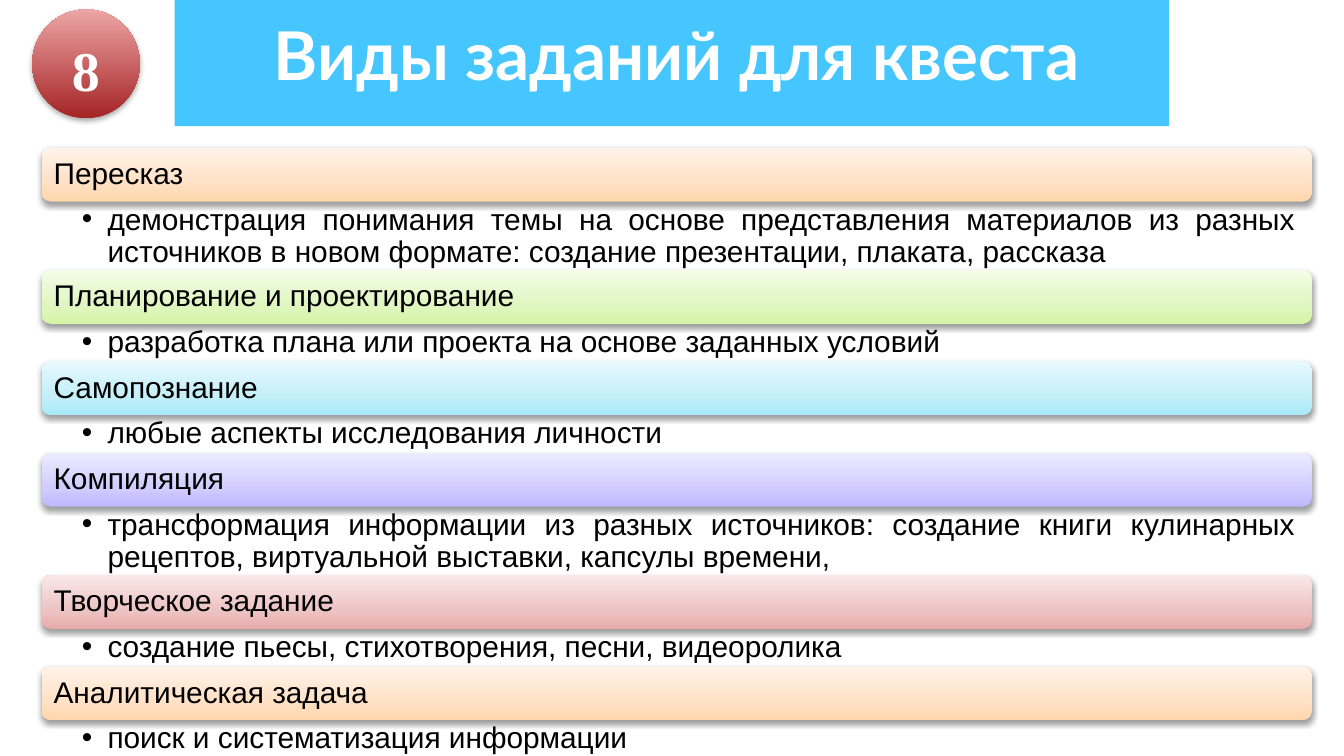
import pptx
import pptx.util
import pptx.dml.color
import pptx.enum.shapes
import pptx.enum.text
import pptx.oxml.ns
import lxml.etree

Inches = pptx.util.Inches
Pt = pptx.util.Pt
RGBColor = pptx.dml.color.RGBColor
KIND = pptx.enum.shapes.MSO_SHAPE
ALIGN = pptx.enum.text.PP_ALIGN
ANCHOR = pptx.enum.text.MSO_ANCHOR
qn = pptx.oxml.ns.qn

WHITE = RGBColor(0xFF, 0xFF, 0xFF)
BLACK = RGBColor(0, 0, 0)
BLUE = RGBColor(0, 0xB2, 0xFF)
ORANGE = [(0, RGBColor(0xFF, 0xD6, 0xAD)), (35, RGBColor(0xFF, 0xE1, 0xC5)), (100, RGBColor(0xFF, 0xF3, 0xE9))]
GREEN = [(0, RGBColor(0xD5, 0xF4, 0xA6)), (35, RGBColor(0xE0, 0xF6, 0xC1)), (100, RGBColor(0xF3, 0xFD, 0xE7))]
CYAN = [(0, RGBColor(0xA9, 0xE9, 0xF9)), (35, RGBColor(0xC3, 0xEF, 0xF9)), (100, RGBColor(0xE7, 0xF9, 0xFE))]
VIOLET = [(0, RGBColor(0xBF, 0xB8, 0xFF)), (35, RGBColor(0xD1, 0xCC, 0xFF)), (100, RGBColor(0xED, 0xEB, 0xFF))]
ROSE = [(0, RGBColor(0xE8, 0xAA, 0xAA)), (35, RGBColor(0xED, 0xC4, 0xC4)), (100, RGBColor(0xF9, 0xE8, 0xE8))]
RED = [(0, RGBColor(0xA5, 0x24, 0x25)), (100, RGBColor(0xED, 0xA5, 0xA5))]

LEFT, WIDTH, HEAD = 0.31, 9.45, 0.4
ONE, TWO = 0.28, 0.51
PLAIN = {"name": "Arial", "size": Pt(16), "bold": False}
TASKS = [
    ("Пересказ", "демонстрация понимания темы на основе представления материалов из разных "
     "источников в новом формате: создание презентации, плаката, рассказа", TWO, ORANGE),
    ("Планирование и проектирование", "разработка плана или проекта на основе заданных условий", ONE, GREEN),
    ("Самопознание", "любые аспекты исследования личности", ONE, CYAN),
    ("Компиляция", "трансформация информации из разных источников: создание книги кулинарных "
     "рецептов, виртуальной выставки, капсулы времени,", TWO, VIOLET),
    ("Творческое задание", "создание пьесы, стихотворения, песни, видеоролика", ONE, ROSE),
    ("Аналитическая задача", "поиск и систематизация информации", ONE, ORANGE),
]


def add_node(parent, tag, **values):
    return lxml.etree.SubElement(parent, qn(tag), {key: str(value) for key, value in values.items()})


def set_all(item, values):
    for key, value in values.items():
        setattr(item, key, value)


def add_shape(slide, kind, box):
    shape = slide.shapes.add_shape(kind, *map(Inches, box))
    shape.shadow.inherit = False
    shape.line.fill.background()
    return shape


def add_shade(shape, stops, alpha):
    shape.fill.gradient()
    shape.fill.gradient_angle = 90
    props = shape.element.spPr
    ramp = props.find(".//" + qn("a:gsLst"))
    for stop in list(ramp):
        ramp.remove(stop)
    for place, color in stops:
        stop = add_node(ramp, "a:gs", pos=place * 1000)
        add_node(stop, "a:srgbClr", val=color)
    shadow = add_node(props.find(qn("a:effectLst")), "a:outerShdw", blurRad=Pt(3.1), dist=Pt(1.6),
                      dir=5400000, rotWithShape=0)
    tint = add_node(shadow, "a:srgbClr", val=BLACK)
    add_node(tint, "a:alpha", val=alpha * 1000)


def add_text(shape, text, font, color, align, insets, anchor=ANCHOR.TOP, lines=1.0, bullet=False):
    frame = shape.text_frame
    sides = ("margin_left", "margin_top", "margin_right", "margin_bottom")
    set_all(frame, dict(zip(sides, map(Inches, insets))))
    set_all(frame, {"word_wrap": True, "vertical_anchor": anchor})
    para = frame.paragraphs[0]
    para.text = text
    set_all(para, {"alignment": align, "line_spacing": lines})
    if bullet:
        para.level = 1
        props = para._p.get_or_add_pPr()
        props.set("marL", str(Inches(0.19)))
        props.set("indent", str(Inches(-0.19)))
        add_node(props, "a:buFont", typeface="Arial")
        add_node(props, "a:buChar", char="•")
    run = para.runs[0]
    set_all(run.font, font)
    run.font.color.rgb = color


def add_title(slide):
    band = add_shape(slide, KIND.RECTANGLE, (1.3, 0, 7.4, 0.94))
    band.fill.solid()
    band.fill.fore_color.rgb = BLUE
    add_node(band.element.spPr.find(".//" + qn("a:srgbClr")), "a:alpha", val=73000)
    title = slide.shapes.add_textbox(*map(Inches, (0.91, 0, 8.25, 0.94)))
    add_text(title, "Виды заданий для квеста", {"name": "Lato", "size": Pt(36), "bold": True},
             WHITE, ALIGN.CENTER, (0.1, 0.1, 0.1, 0.1))


def add_task(slide, top, name, note, height, stops):
    card = add_shape(slide, KIND.ROUNDED_RECTANGLE, (LEFT, top, WIDTH, HEAD))
    add_shade(card, stops, 38)
    add_text(card, name, PLAIN, BLACK, ALIGN.LEFT, (0.07, 0.07, 0.07, 0.07), ANCHOR.MIDDLE, 0.9)
    body = slide.shapes.add_textbox(*map(Inches, (LEFT, top + HEAD, WIDTH, height)))
    add_text(body, note, PLAIN, BLACK, ALIGN.JUSTIFY, (0.3, 0.02, 0.12, 0.02), lines=0.9, bullet=True)


def add_badge(slide):
    badge = add_shape(slide, KIND.OVAL, (0.24, 0.07, 0.8, 0.81))
    add_shade(badge, RED, 35)
    add_text(badge, "8", {"name": "Times New Roman", "size": Pt(30), "bold": True},
             WHITE, ALIGN.CENTER, (0.07, 0.04, 0.07, 0.04), ANCHOR.MIDDLE, 1.15)


def main():
    deck = pptx.Presentation()
    set_all(deck, {"slide_width": Inches(10), "slide_height": Inches(10 * 9 / 16)})
    slide = deck.slides.add_slide(deck.slide_layouts[6])
    add_title(slide)
    top = 1.1
    for name, note, height, stops in TASKS:
        add_task(slide, top, name, note, height, stops)
        top += HEAD + height
    add_badge(slide)
    deck.save("out.pptx")


if __name__ == "__main__":
    main()
